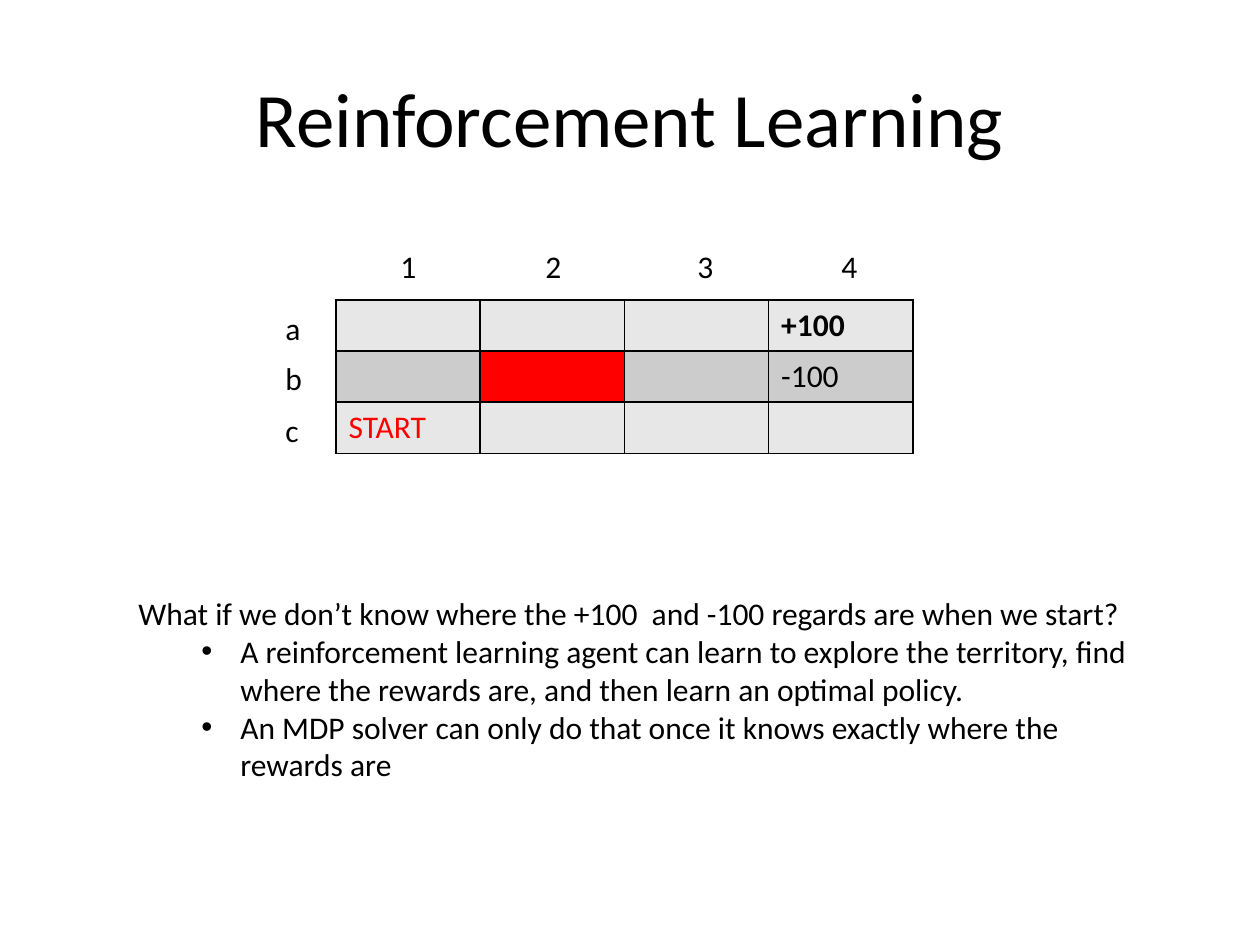
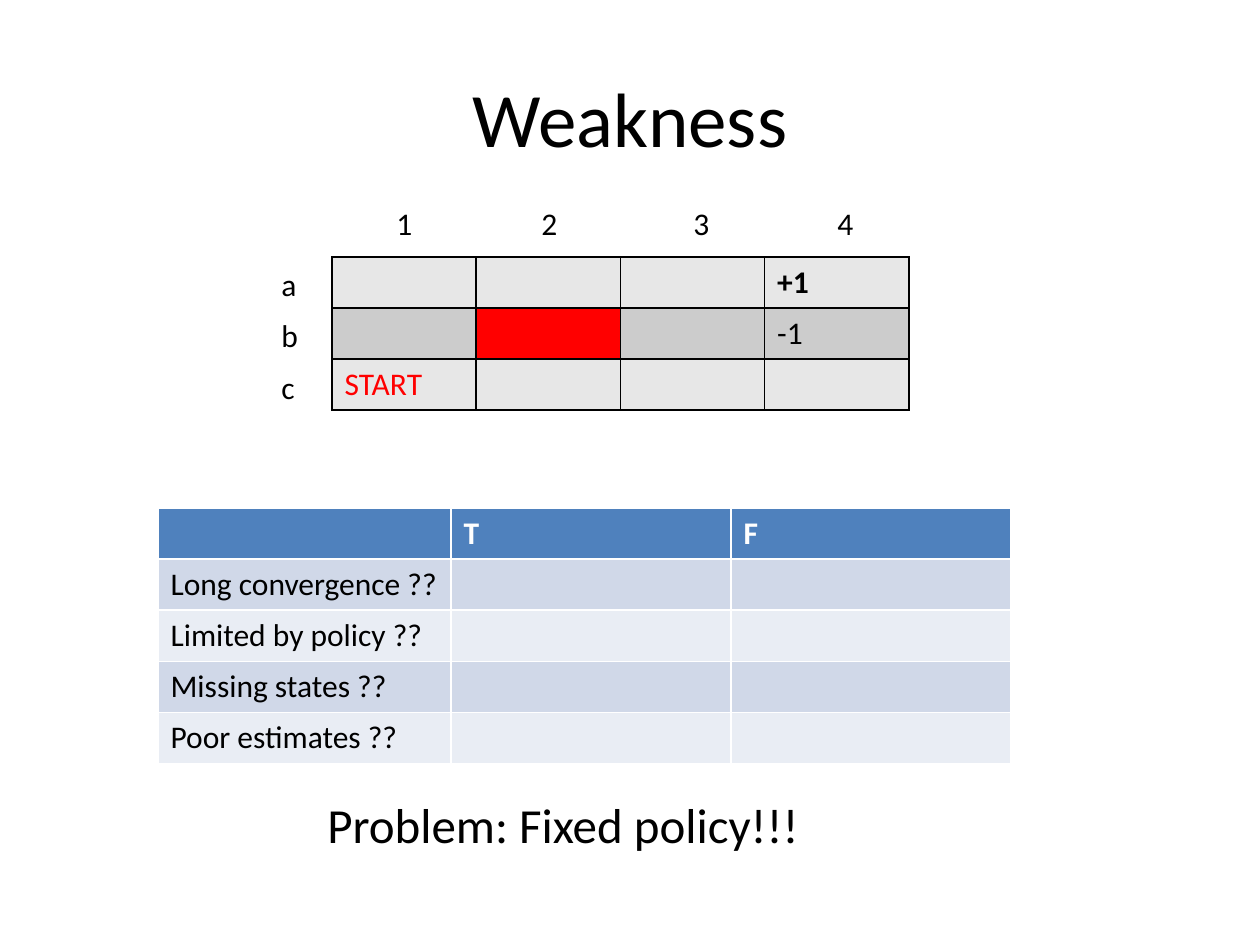
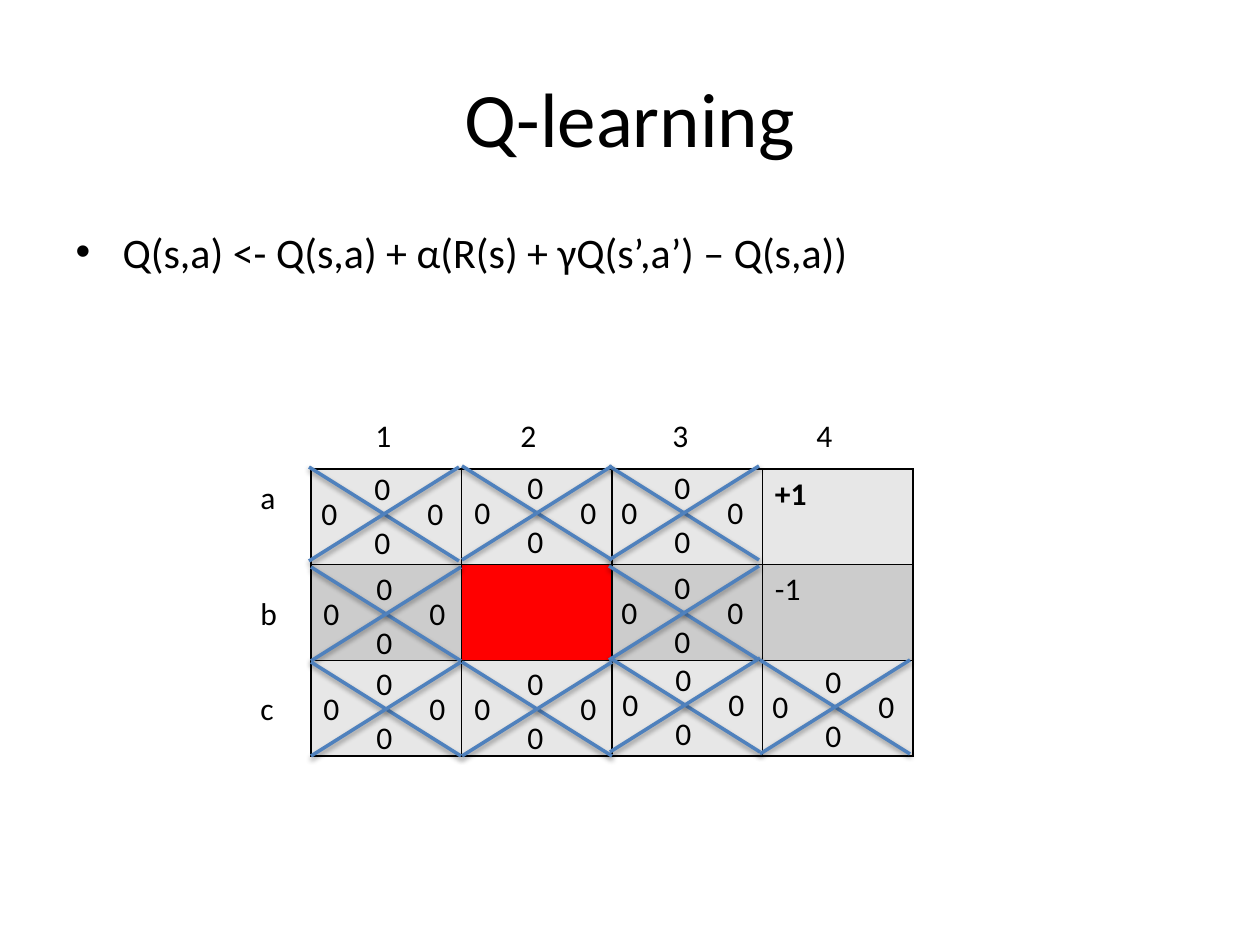
from dataclasses import dataclass
from typing import NamedTuple

from lxml import etree
from pptx import Presentation
from pptx.dml.color import RGBColor
from pptx.enum.shapes import MSO_CONNECTOR
from pptx.enum.text import MSO_ANCHOR, MSO_AUTO_SIZE, PP_ALIGN
from pptx.oxml.ns import qn
from pptx.util import Emu, Pt

PX_PER_INCH = 126
EMU_PER_INCH = 914400
FONT = "Calibri"
TITLE_SIZE, FORMULA_SIZE, CONCLUSION_SIZE, TEXT_SIZE = 44, 24, 28, 18

BLACK = RGBColor(0x00, 0x00, 0x00)
WHITE = RGBColor(0xFF, 0xFF, 0xFF)
RED = RGBColor(0xFF, 0x00, 0x00)
BLUE = RGBColor(0x4F, 0x81, 0xBD)
BLUE_BANDS = (RGBColor(0xD0, 0xD8, 0xE8), RGBColor(0xE9, 0xED, 0xF4))
GREY_BANDS = (RGBColor(0xE7, 0xE7, 0xE7), RGBColor(0xCC, 0xCC, 0xCC))

STRAIGHT = MSO_CONNECTOR.STRAIGHT
CENTER = PP_ALIGN.CENTER
MIDDLE = MSO_ANCHOR.MIDDLE
GROW = MSO_AUTO_SIZE.SHAPE_TO_FIT_TEXT

TITLE_LAYOUT, TITLE_BODY_LAYOUT = 5, 1
STATE_COLUMNS, STATE_ROWS = 4, 3
WALL = (1, 1)
COLUMN_LABEL_LEFTS = (52, 197, 349, 493)
COLUMN_LABEL_RISE = 59
ROW_LABEL_SHIFT = 63
LABEL_WIDTH, LABEL_HEIGHT = 42, 51
CROSS_WIDTH, CROSS_HEIGHT = 150, 94
Q_VALUE_OFFSETS = ((53, -4), (106, 21), (53, 50), (0, 21))


class Box(NamedTuple):
    left: int
    top: int
    width: int
    height: int

    def emu(self) -> tuple[Emu, ...]:
        return tuple(px(length) for length in self)


class CellText(NamedTuple):
    text: str
    color: RGBColor = BLACK
    bold: bool = False


@dataclass(frozen=True)
class GridWorld:
    """A board of states; row_label_tops are measured from the board's top."""
    box: Box
    row_label_tops: tuple[int, ...]
    texts: dict[tuple[int, int], CellText]


class QCell(NamedTuple):
    left: int
    top: int


def px(length: float) -> Emu:
    return Emu(round(length * EMU_PER_INCH / PX_PER_INCH))


def add_run(paragraph, text: str, size: int = TEXT_SIZE,
            color: RGBColor = BLACK, bold: bool = False) -> None:
    run = paragraph.add_run()
    run.text = text
    run.font.name = FONT
    run.font.size = Pt(size)
    run.font.bold = bold
    run.font.color.rgb = color


def place(shape, box: Box) -> None:
    shape.left, shape.top, shape.width, shape.height = box.emu()


def set_bullet(paragraph, level: int, indent: int, hanging: int) -> None:
    paragraph.level = level
    properties = paragraph._p.get_or_add_pPr()
    properties.set("marL", str(px(indent)))
    properties.set("indent", str(-px(hanging)))
    etree.SubElement(properties, qn("a:buFont"), typeface="Arial")
    etree.SubElement(properties, qn("a:buChar"), char="•")


def add_titled_slide(deck, title: str, layout: int = TITLE_LAYOUT):
    slide = deck.slides.add_slide(deck.slide_layouts[layout])
    heading = slide.shapes.title
    place(heading, Box(63, 38, 1134, 157))
    heading.text_frame.vertical_anchor = MIDDLE
    paragraph = heading.text_frame.paragraphs[0]
    paragraph.alignment = CENTER
    add_run(paragraph, title, TITLE_SIZE)
    return slide


def add_text(shapes, box: Box, text: str, size: int = TEXT_SIZE,
             wrap: bool = False):
    frame = shapes.add_textbox(*box.emu()).text_frame
    frame.word_wrap = wrap
    frame.auto_size = GROW
    add_run(frame.paragraphs[0], text, size)
    return frame


def add_label(shapes, left: int, top: int, text: str) -> None:
    add_text(shapes, Box(left, top, LABEL_WIDTH, LABEL_HEIGHT), text)


def fill_cell(cell, fill: RGBColor, content: CellText | None = None) -> None:
    cell.fill.solid()
    cell.fill.fore_color.rgb = fill
    if content:
        add_run(cell.text_frame.paragraphs[0], content.text,
                color=content.color, bold=content.bold)


def outline_cell(cell) -> None:
    """Draws a thin black border; border elements must precede the fill."""
    properties = cell._tc.get_or_add_tcPr()
    for position, side in enumerate(("lnL", "lnR", "lnT", "lnB")):
        border = etree.Element(qn(f"a:{side}"), w=str(Pt(1)))
        fill = etree.SubElement(border, qn("a:solidFill"))
        etree.SubElement(fill, qn("a:srgbClr"), val=str(BLACK))
        properties.insert(position, border)


def add_grid_world(slide, world: GridWorld) -> None:
    box = world.box
    board = slide.shapes.add_table(STATE_ROWS, STATE_COLUMNS, *box.emu()).table
    board.first_row = False
    for column in board.columns:
        column.width = px(box.width / STATE_COLUMNS)
    for r, row in enumerate(board.rows):
        row.height = px(box.height / STATE_ROWS)
        for c, cell in enumerate(row.cells):
            fill = RED if (r, c) == WALL else GREY_BANDS[r % 2]
            fill_cell(cell, fill, world.texts.get((r, c)))
            outline_cell(cell)
    for number, offset in enumerate(COLUMN_LABEL_LEFTS, start=1):
        add_label(slide.shapes, box.left + offset,
                  box.top - COLUMN_LABEL_RISE, str(number))
    for letter, offset in zip("abc", world.row_label_tops):
        add_label(slide.shapes, box.left - ROW_LABEL_SHIFT,
                  box.top + offset, letter)


def reward_texts(reward: str, start: bool = True) -> dict[tuple[int, int], CellText]:
    texts = {(0, 3): CellText(f"+{reward}", bold=True),
             (1, 3): CellText(f"-{reward}")}
    if start:
        texts[2, 0] = CellText("START", RED)
    return texts


def add_shadow(connector) -> None:
    effects = etree.SubElement(connector._element.spPr, qn("a:effectLst"))
    shadow = etree.SubElement(effects, qn("a:outerShdw"), blurRad="40000",
                              dist="20000", dir="5400000", rotWithShape="0")
    color = etree.SubElement(shadow, qn("a:srgbClr"), val=str(BLACK))
    etree.SubElement(color, qn("a:alpha"), val="38000")


def add_q_cell(slide, q_cell: QCell) -> None:
    """Splits a state into four actions, each with a zero Q-value."""
    shapes = slide.shapes.add_group_shape().shapes
    left, top = q_cell
    right, bottom = left + CROSS_WIDTH, top + CROSS_HEIGHT
    for start, end in ((left, right), (right, left)):
        diagonal = shapes.add_connector(STRAIGHT, px(start), px(top),
                                        px(end), px(bottom))
        diagonal.line.color.rgb = BLUE
        diagonal.line.width = Pt(2)
        add_shadow(diagonal)
    for dx, dy in Q_VALUE_OFFSETS:
        add_label(shapes, left + dx, top + dy, "0")


def add_weakness_table(slide) -> None:
    rows = (("", "T", "F"), ("Long convergence ??",), ("Limited by policy ??",),
            ("Missing states ??",), ("Poor estimates ??",))
    widths = (293, 280, 280)
    box = Box(158, 508, sum(widths), 51 * len(rows))
    table = slide.shapes.add_table(len(rows), len(widths), *box.emu()).table
    for column, width in zip(table.columns, widths):
        column.width = px(width)
    for r, texts in enumerate(rows):
        header = r == 0
        fill = BLUE if header else BLUE_BANDS[(r - 1) % 2]
        for c in range(len(widths)):
            text = texts[c] if c < len(texts) else ""
            content = CellText(text, WHITE if header else BLACK, header)
            fill_cell(table.cell(r, c), fill, content if text else None)


def build_reinforcement_slide(deck) -> None:
    slide = add_titled_slide(deck, "Reinforcement Learning")
    add_grid_world(slide, GridWorld(Box(336, 300, 577, 153), (3, 53, 105),
                                    reward_texts("100")))
    question = add_text(
        slide.shapes, Box(126, 588, 1018, 204),
        "What if we don’t know where the +100  and -100 regards are when we start?",
        wrap=True)
    for answer in (
            "A reinforcement learning agent can learn to explore the territory, "
            "find where the rewards are, and then learn an optimal policy.",
            "An MDP solver can only do that once it knows exactly where the "
            "rewards are"):
        paragraph = question.add_paragraph()
        set_bullet(paragraph, level=1, indent=102, hanging=39)
        add_run(paragraph, answer)


def build_weakness_slide(deck) -> None:
    slide = add_titled_slide(deck, "Weakness")
    add_weakness_table(slide)
    add_text(slide.shapes, Box(315, 788, 504, 72), "Problem: Fixed policy!!!",
             CONCLUSION_SIZE)
    add_grid_world(slide, GridWorld(Box(332, 257, 577, 153), (2, 53, 105),
                                    reward_texts("1")))


def build_q_learning_slide(deck) -> None:
    slide = add_titled_slide(deck, "Q-learning", TITLE_BODY_LAYOUT)
    formula = slide.placeholders[1]
    place(formula, Box(63, 220, 1134, 94))
    paragraph = formula.text_frame.paragraphs[0]
    set_bullet(paragraph, level=2, indent=47, hanging=47)
    add_run(paragraph, "Q(s,a) <- Q(s,a) + α(R(s) + γQ(s’,a’) – Q(s,a))",
            FORMULA_SIZE)
    add_grid_world(slide, GridWorld(Box(311, 469, 602, 287), (3, 119, 214),
                                    reward_texts("1", start=False)))
    for q_cell in (QCell(311, 567), QCell(609, 566), QCell(609, 466),
                   QCell(610, 658), QCell(462, 662), QCell(311, 662),
                   QCell(462, 466), QCell(309, 467), QCell(760, 660)):
        add_q_cell(slide, q_cell)


def main() -> None:
    deck = Presentation()
    deck.slide_width, deck.slide_height = px(1260), px(945)
    build_reinforcement_slide(deck)
    build_weakness_slide(deck)
    build_q_learning_slide(deck)
    deck.save("out.pptx")


if __name__ == "__main__":
    main()
